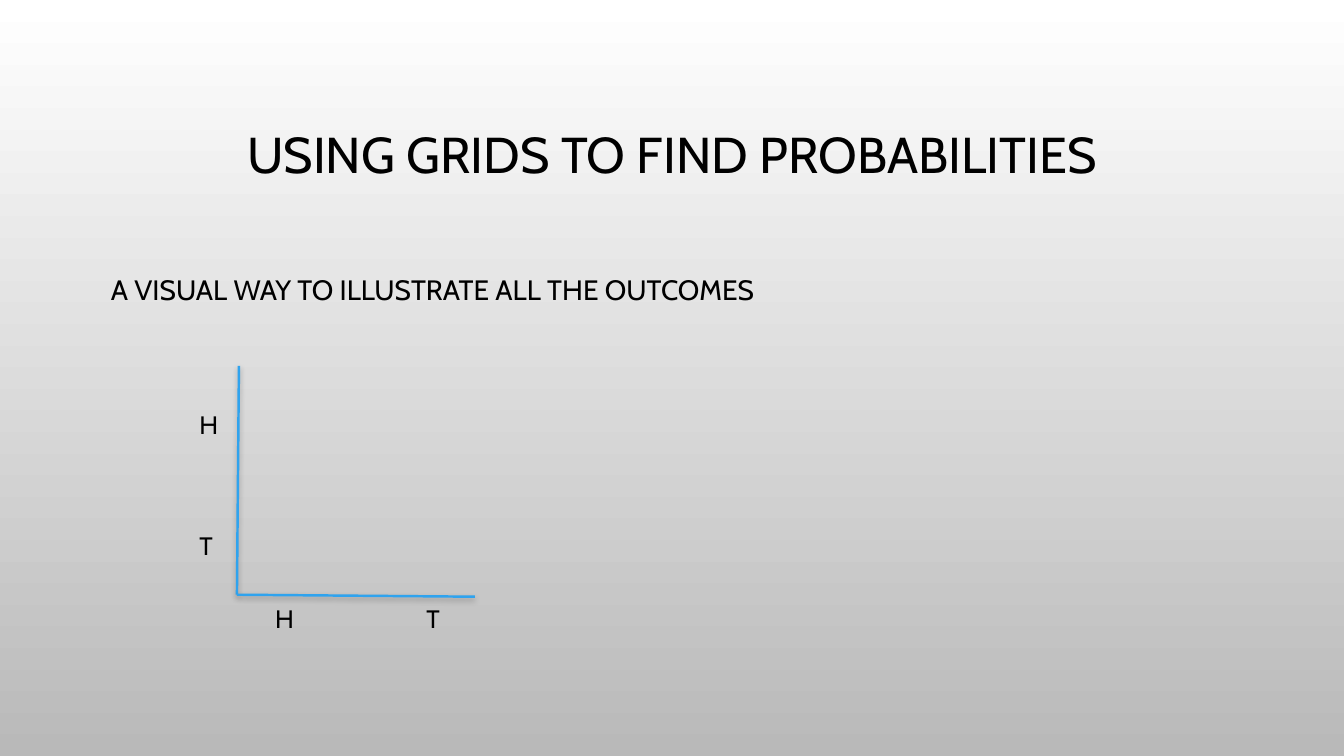
from lxml import etree
from pptx import Presentation
from pptx.dml.color import RGBColor
from pptx.enum.shapes import MSO_CONNECTOR
from pptx.enum.text import MSO_ANCHOR, MSO_AUTO_SIZE, PP_ALIGN
from pptx.oxml import parse_xml
from pptx.oxml.ns import qn
from pptx.util import Inches, Pt

LINE = MSO_CONNECTOR.STRAIGHT
TOP, MID = MSO_ANCHOR.TOP, MSO_ANCHOR.MIDDLE
LEFT, MIDDLE = PP_ALIGN.LEFT, PP_ALIGN.CENTER
FIXED = MSO_AUTO_SIZE.NONE
NS = "http://schemas.openxmlformats.org/drawingml/2006/main"
SHADE = (
    f'<a:effectLst xmlns:a="{NS}"><a:outerShdw blurRad="50800" dist="25400" '
    'dir="5400000" rotWithShape="0"><a:srgbClr val="000000">'
    '<a:alpha val="28000"/></a:srgbClr></a:outerShdw></a:effectLst>'
)


def color(code):
    return RGBColor.from_string(code)


def apply(target, values):
    for name, value in values.items():
        setattr(target, name, value)


class Board:
    """Style and current slide; places are percent of the slide's size."""

    font = "Cabin"
    ink = "000000"
    blue = "2FA3EE"

    def __init__(self, deck):
        self.deck = deck
        self.slide = deck.slides.add_slide(deck.slide_layouts[1])

    def place(self, x, y):
        return (round(self.deck.slide_width * x / 100),
                round(self.deck.slide_height * y / 100))

    def fade(self, first, last):
        fill = self.slide.background.fill
        fill.gradient()
        fill.gradient_angle = 270
        for stop, code in zip(fill.gradient_stops, (first, last)):
            stop.color.rgb = color(code)

    def letter(self, par, text, size, **form):
        apply(par, form)
        run = par.add_run()
        run.text = text
        apply(run.font, {"name": self.font, "size": Pt(size)})
        run.font.color.rgb = color(self.ink)

    def holder(self, index, box, text, size, anchor, **form):
        shape = self.slide.placeholders[index]
        spot = self.place(*box[:2]) + self.place(*box[2:])
        apply(shape, dict(zip(("left", "top", "width", "height"), spot)))
        frame = shape.text_frame
        apply(frame, {"word_wrap": True, "auto_size": FIXED,
                      "vertical_anchor": anchor})
        par = frame.paragraphs[0]
        props = par._p.get_or_add_pPr()
        for name in ("marL", "indent"):
            props.set(name, "0")
        etree.SubElement(props, qn("a:buNone"))
        self.letter(par, text, size, space_before=Pt(0), **form)

    def label(self, box, lines, gap=0, tab=0):
        shape = self.slide.shapes.add_textbox(
            *self.place(*box[:2]), *self.place(*box[2:]))
        frame = shape.text_frame
        frame.word_wrap = True
        for i, text in enumerate(lines):
            par = frame.add_paragraph() if i else frame.paragraphs[0]
            if tab:
                stops = etree.SubElement(par._p.get_or_add_pPr(),
                                         qn("a:tabLst"))
                etree.SubElement(stops, qn("a:tab"),
                                 pos=str(Inches(tab)), algn="l")
            self.letter(par, text, 18, space_before=Pt(gap if i else 0))

    def axis(self, start, end):
        line = self.slide.shapes.add_connector(
            LINE, *self.place(*start), *self.place(*end))
        line.line.color.rgb = color(self.blue)
        line.line.width = Pt(1.75)
        line._element.spPr.append(parse_xml(SHADE))


def main():
    deck = Presentation()
    apply(deck, {"slide_width": Inches(13.33), "slide_height": Inches(7.5)})
    board = Board(deck)
    board.fade("FFFFFF", "B9B9B9")

    # Title and lead line
    board.holder(0, (7.5, 9.07, 85, 23.33),
                 "USING GRIDS TO FIND PROBABILITIES", 36, MID,
                 alignment=MIDDLE, line_spacing=0.9)
    board.holder(1, (7.5, 34.53, 85, 49.87),
                 "A VISUAL WAY TO ILLUSTRATE ALL THE OUTCOMES", 20, TOP,
                 alignment=LEFT, line_spacing=1.2)

    # Axes of the coin grid
    corner = (17.63, 78.67)
    board.axis((17.78, 48.4), corner)
    board.axis(corner, (35.33, 78.93))

    # Coin sides along each axis
    board.label((19.73, 79.2, 16.8, 5.33), ["H\tT"], tab=1.5)
    board.label((14.1, 53.47, 4.43, 21.6), ["H", "T"], gap=65)

    deck.save("out.pptx")


if __name__ == "__main__":
    main()
